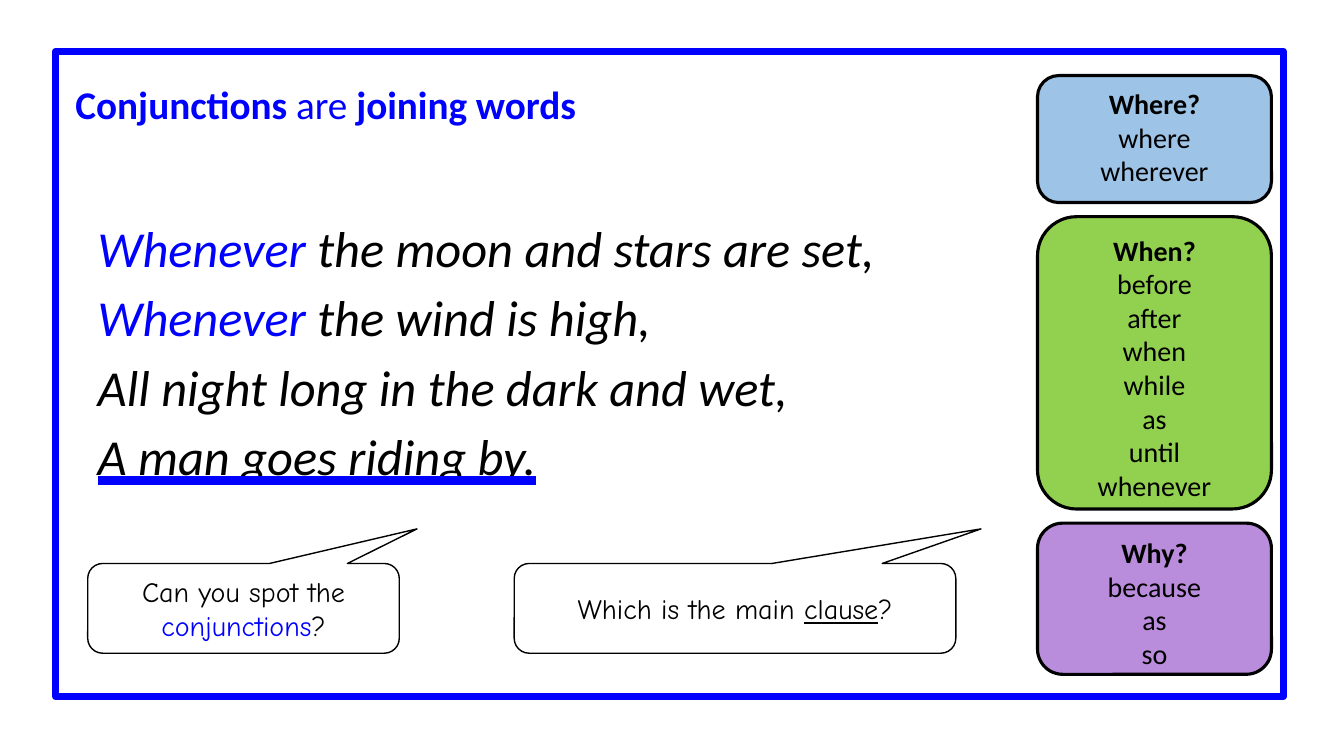
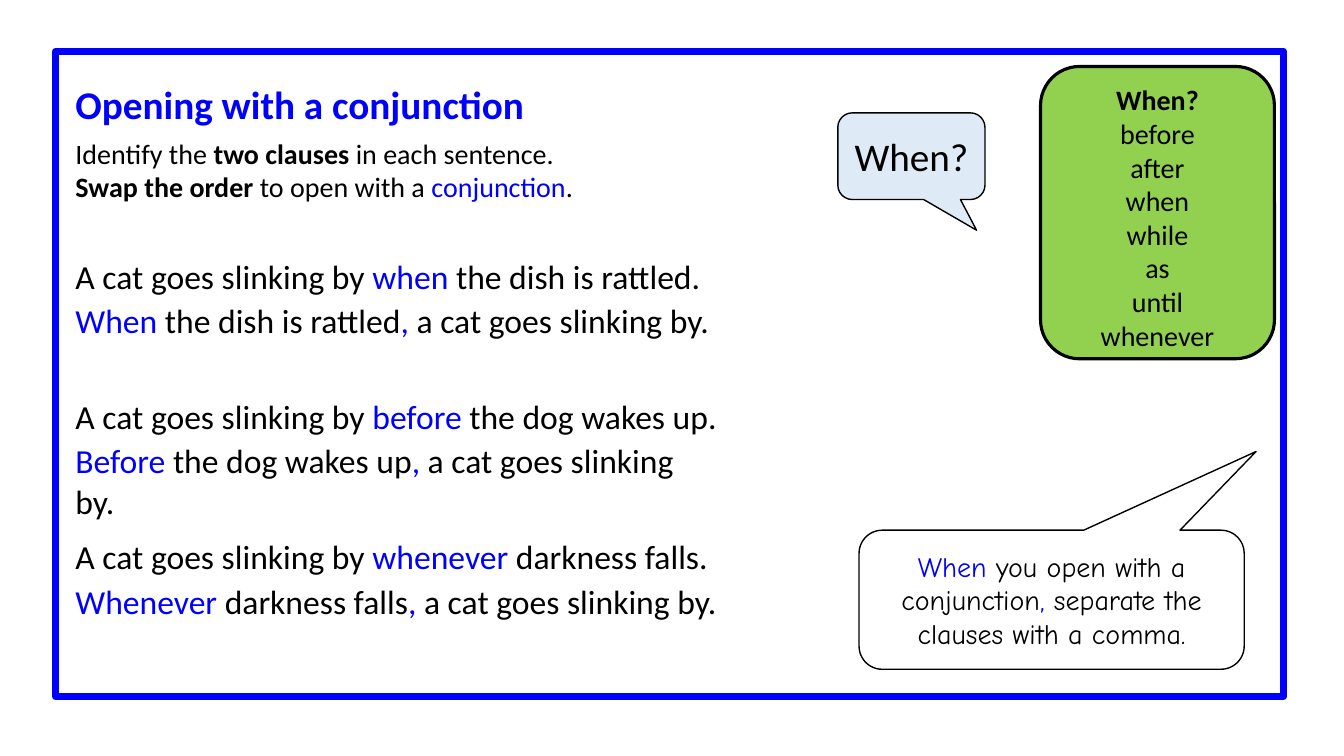
from dataclasses import dataclass
from pptx import Presentation
from pptx.dml.color import RGBColor
from pptx.enum.shapes import MSO_SHAPE
from pptx.enum.text import MSO_ANCHOR, MSO_AUTO_SIZE, MSO_UNDERLINE, PP_ALIGN
from pptx.oxml import parse_xml
from pptx.oxml.ns import nsdecls
from pptx.util import Inches, Pt


@dataclass(frozen=True)
class Theme:
    blue: str = "0000FF"
    black: str = "000000"
    white: str = "FFFFFF"
    sky: str = "9DC3E6"
    green: str = "92D050"
    purple: str = "BA8CDC"
    pale: str = "DEEBF7"
    font: str = "Calibri"
    comic: str = "Comic Neue"
    poem: int = 36
    title: int = 28
    example: int = 24
    body: int = 20


THEME = Theme()
FRAME = (0.55, 0.51, 12.18, 6.4)
MARKS = {
    "b": {"bold": True},
    "i": {"italic": True},
    "u": {"underline": True},
    "h": {"underline": MSO_UNDERLINE.HEAVY_LINE},
}
WORDS = {
    "Where?": (THEME.sky, 1.26, ["where", "wherever"]),
    "When?": (THEME.green, 2.9,
              ["before", "after", "when", "while", "as", "until", "whenever"]),
    "Why?": (THEME.purple, 1.5, ["because", "as", "so"]),
}


def color(code):
    return RGBColor.from_string(code)


def add_run(para, text, marks="", size=THEME.body, face=THEME.font):
    run = para.add_run()
    run.text = text
    style = {"name": face, "size": Pt(size)}
    for mark in marks:
        style.update(MARKS.get(mark, {}))
    for key, value in style.items():
        setattr(run.font, key, value)
    run.font.color.rgb = color(THEME.blue if "c" in marks else THEME.black)
    if "h" in marks:
        fill = parse_xml(
            f'<a:uFill {nsdecls("a")}><a:solidFill>'
            f'<a:srgbClr val="{THEME.blue}"/></a:solidFill></a:uFill>')
        run.font.fill
        run.font._element.find(
            "{http://schemas.openxmlformats.org/drawingml/2006/main}latin"
        ).addprevious(fill)


def write(frame, lines, size=THEME.body, face=THEME.font, **style):
    for index, runs in enumerate(lines):
        para = frame.paragraphs[0] if index == 0 else frame.add_paragraph()
        for key, value in style.items():
            setattr(para, key, value)
        for text, *marks in runs:
            add_run(para, text, "".join(marks), size, face)


def add_text(slide, box, lines, size=THEME.body, **style):
    frame = slide.shapes.add_textbox(*map(Inches, box)).text_frame
    frame.word_wrap = True
    frame.auto_size = MSO_AUTO_SIZE.SHAPE_TO_FIT_TEXT
    write(frame, lines, size, **style)
    return frame


def add_panel(slide, kind, box, fill, line, width):
    shape = slide.shapes.add_shape(kind, *map(Inches, box))
    shape.shadow.inherit = False
    if fill:
        shape.fill.solid()
        shape.fill.fore_color.rgb = color(fill)
    else:
        shape.fill.background()
    shape.line.color.rgb = color(line)
    shape.line.width = Pt(width)
    return shape


def add_card(slide, left, top, head):
    fill, height, words = WORDS[head]
    card = add_panel(slide, MSO_SHAPE.ROUNDED_RECTANGLE,
                     (left, top, 2.32, height), fill, THEME.black, 2.25)
    card.text_frame.vertical_anchor = MSO_ANCHOR.TOP
    lines = [[(head, "b")]] + [[(word,)] for word in words]
    write(card.text_frame, lines, alignment=PP_ALIGN.CENTER)
    return top + height


def add_cards(slide, left, top, gap=0.14):
    for head in WORDS:
        top = add_card(slide, left, top, head) + gap


def add_bubble(slide, box, tip, runs, fill=THEME.white,
               size=THEME.body, face=THEME.comic):
    bubble = add_panel(slide, MSO_SHAPE.ROUNDED_RECTANGULAR_CALLOUT,
                       box, fill, THEME.black, 1)
    for index, value in enumerate(tip):
        bubble.adjustments[index] = value
    bubble.text_frame.vertical_anchor = MSO_ANCHOR.MIDDLE
    write(bubble.text_frame, [runs], size, face, alignment=PP_ALIGN.CENTER)


def add_page(deck, title, height=0.57):
    slide = deck.slides.add_slide(deck.slide_layouts[6])
    add_panel(slide, MSO_SHAPE.RECTANGLE, FRAME, None, THEME.blue, 5)
    box = (FRAME[0] + 0.1, FRAME[1] + 0.24, 7.75, height)
    frame = add_text(slide, box, [title], THEME.title, space_after=Pt(6))
    return slide, frame


def add_poem(slide, box):
    lines = [
        [("Whenever", "ci"), (" the moon and stars are set,", "i")],
        [("Whenever", "ci"), (" the wind is high,", "i")],
        [("All night long in the dark and wet,", "i")],
        [("A man goes riding by.", "ih")],
    ]
    frame = add_text(slide, box, lines, THEME.poem, line_spacing=1.15)
    frame.paragraphs[-1].space_after = Pt(10)


def add_pairs(slide, left, top, step=1.39, drop=0.44):
    pairs = [("when", "the dish is rattled", 7),
             ("before", "the dog wakes up", 6.5),
             ("whenever", "darkness falls", 7)]
    for index, (joiner, clause, width) in enumerate(pairs):
        lines = [
            [("A cat goes slinking by ",), (joiner, "c"), (f" {clause}.",)],
            [(joiner.capitalize(), "c"), (f" {clause}",), (",", "c"),
             (" a cat goes slinking by.",)],
        ]
        for row, runs in enumerate(lines):
            box = (left, top + index * step + row * drop,
                   width if row else 7, 0.5)
            add_text(slide, box, [runs], THEME.example)


def joining(deck):
    slide, _ = add_page(deck, [("Conjunctions ", "bc"), ("are ", "c"),
                               ("joining words", "bc")])
    add_poem(slide, (0.87, 2.01, 8.79, 2.89))
    add_cards(slide, 10.29, 0.75)
    tip = (0.557, -0.886)
    add_bubble(slide, (0.87, 5.59, 3.09, 0.89), tip,
               [("Can you spot the ",), ("conjunctions", "c"), ("?",)])
    add_bubble(slide, (5.1, 5.59, 4.38, 0.89), tip,
               [("Which is the main ",), ("clause", "u"), ("?",)])


def opening(deck):
    slide, frame = add_page(deck, [("Opening with a conjunction", "bc")], 1.33)
    tasks = [
        [("Identify the ",), ("two clauses ", "b"), ("in each sentence.",)],
        [("Swap the order ", "b"), ("to open with a ",),
         ("conjunction", "c"), (".",)],
    ]
    for runs in tasks:
        para = frame.add_paragraph()
        for run in runs:
            add_run(para, *run)
    add_card(slide, 10.32, 0.66, "When?")
    add_bubble(slide, (8.31, 1.12, 1.46, 0.86), (0.443, 0.854),
               [("When?",)], THEME.pale, THEME.title, THEME.font)
    add_pairs(slide, 0.65, 2.49)
    add_bubble(slide, (8.52, 5.26, 3.82, 1.38), (0.531, -1.066),
               [("When", "c"), (" you open with a conjunction",), (",", "c"),
                (" separate the clauses with a comma.",)])


def main():
    deck = Presentation()
    deck.slide_width = Inches(13.33)
    deck.slide_height = Inches(7.5)
    joining(deck)
    opening(deck)
    deck.save("out.pptx")


if __name__ == "__main__":
    main()
